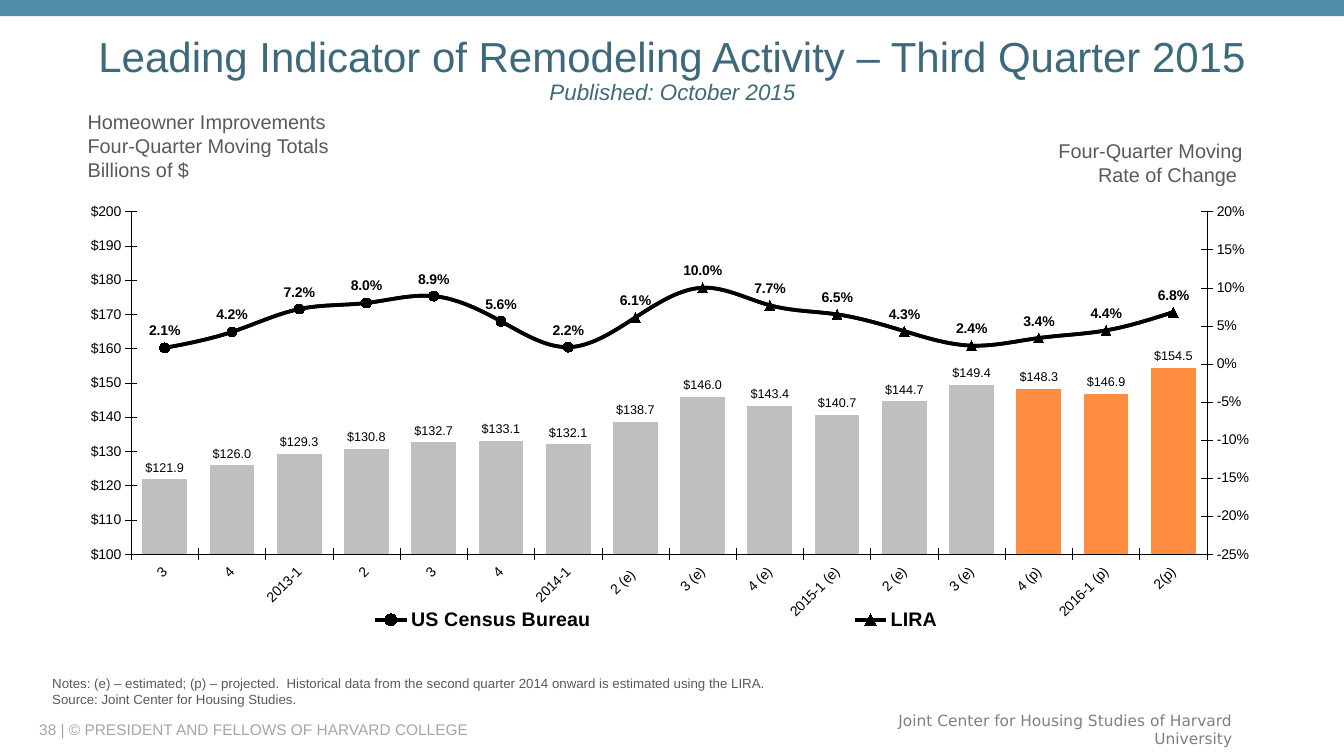
from copy import deepcopy

from pptx import Presentation
from pptx.chart.data import CategoryChartData as ChartData
from pptx.dml.color import RGBColor
from pptx.enum.chart import XL_CHART_TYPE as Kind, XL_LABEL_POSITION as Spot
from pptx.enum.chart import XL_LEGEND_POSITION as Side, XL_MARKER_STYLE as Mark
from pptx.enum.chart import XL_TICK_MARK as Tick
from pptx.enum.shapes import MSO_SHAPE as Shape
from pptx.enum.text import MSO_ANCHOR as Anchor, PP_ALIGN as Align
from pptx.oxml import parse_xml
from pptx.oxml.ns import nsdecls, qn
from pptx.util import Inches, Pt

WIDTH, HEIGHT = Inches(13.33), Inches(7.5)
TEAL = RGBColor(0x50, 0x8D, 0xA6)
NAVY = RGBColor(0x3C, 0x6A, 0x7C)
SLATE = RGBColor(0x5A, 0x5A, 0x5A)
GREY = RGBColor(0x80, 0x80, 0x80)
PALE = RGBColor(0xA6, 0xA6, 0xA6)
SILVER = RGBColor(0xBF, 0xBF, 0xBF)
ORANGE = RGBColor(0xFF, 0x8D, 0x41)
BLACK = RGBColor(0, 0, 0)

QUARTERS = ["3", "4", "2013-1", "2", "3", "4", "2014-1", "2 (e) ", "3 (e)", "4 (e)",
            "2015-1 (e)", "2 (e)", "3 (e)", "4 (p)", "2016-1 (p)", "2(p)"]
TOTALS = [121.9, 126, 129.3, 130.8, 132.7, 133.1, 132.1, 138.7,
          146, 143.4, 140.7, 144.7, 149.4, 148.3, 146.9, 154.5]
RATES = [0.021, 0.042, 0.072, 0.08, 0.089, 0.056, 0.022, 0.061,
         0.1, 0.077, 0.065, 0.043, 0.024, 0.034, 0.044, 0.068]
FIRST_LIRA = 7
FIRST_PROJECTED = 13


def place(left, top, width, height):
    """Turn percentages of the slide into lengths."""
    return [int(side * share / 100) for side, share in
            zip((WIDTH, HEIGHT, WIDTH, HEIGHT), (left, top, width, height))]


def set_font(font, size, color, bold=None, name="Arial"):
    font.size, font.name, font.bold = Pt(size), name, bold
    font.color.rgb = color


def add_run(para, text, size, color, name="Arial"):
    run = para.add_run()
    run.text = text
    set_font(run.font, size, color, name=name)
    return run


def add_box(slide, spot, anchor=Anchor.TOP):
    frame = slide.shapes.add_textbox(*place(*spot)).text_frame
    frame.word_wrap = True
    frame.vertical_anchor = anchor
    return frame


def add_text(slide, spot, lines, size, color, align=Align.LEFT,
             anchor=Anchor.TOP, name="Arial"):
    frame = add_box(slide, spot, anchor)
    for row, line in enumerate(lines):
        para = frame.add_paragraph() if row else frame.paragraphs[0]
        para.alignment = align
        add_run(para, line, size, color, name)


def add_title(slide):
    para = add_box(slide, (4.2, 4.4, 91.67, 10), Anchor.MIDDLE).paragraphs[0]
    para.alignment, para.line_spacing = Align.CENTER, 0.9
    add_run(para, "Leading Indicator of Remodeling Activity – Third Quarter 2015", 30, NAVY)
    para.add_line_break()
    add_run(para, "Published: October 2015", 16, NAVY).font.italic = True


def add_band(slide):
    band = slide.shapes.add_shape(Shape.RECTANGLE, *place(0, 0, 100, 2.13))
    band.shadow.inherit = False
    paint(band, TEAL)
    band.line.fill.background()


def drop(parent, tag):
    for child in parent.findall(qn(tag)):
        parent.remove(child)


def make_layout(left, top, width, height, inner=False):
    target = '<c:layoutTarget val="inner"/>' if inner else ""
    modes = '<c:xMode val="edge"/><c:yMode val="edge"/>'
    sizes = "".join(f'<c:{tag} val="{val}"/>' for tag, val in
                    zip("xywh", (left, top, width, height)))
    return parse_xml(f'<c:layout {nsdecls("c")}><c:manualLayout>{target}{modes}{sizes}'
                     '</c:manualLayout></c:layout>')


def style_axis(axis):
    axis.has_major_gridlines = False
    axis.major_tick_mark, axis.minor_tick_mark = Tick.CROSS, Tick.NONE
    set_font(axis.tick_labels.font, 10, BLACK)
    draw_line(axis.format.line, 0.33)


def scale_axis(axis, low, high, step, code):
    axis.minimum_scale, axis.maximum_scale, axis.major_unit = low, high, step
    axis.tick_labels.number_format = code
    axis.tick_labels.number_format_is_linked = False


def split_lines(chart):
    """Move all series but the first to a line plot on a second pair of axes."""
    bars = chart.plots[0]._element
    area = bars.getparent()
    lines = parse_xml(f'<c:lineChart {nsdecls("c")}><c:grouping val="standard"/>'
                      '<c:varyColors val="0"/><c:marker val="1"/>'
                      '<c:axId val="501"/><c:axId val="502"/></c:lineChart>')
    for ser in bars.findall(qn("c:ser"))[1:]:
        drop(ser, "c:invertIfNegative")
        lines.find(qn("c:marker")).addprevious(ser)
    bars.addnext(lines)
    last = area.find(qn("c:valAx"))
    for tag, own, other in (("c:catAx", "501", "502"), ("c:valAx", "502", "501")):
        twin = deepcopy(area.find(qn(tag)))
        twin.find(qn("c:axId")).set("val", own)
        twin.find(qn("c:crossAx")).set("val", other)
        if tag == "c:catAx":
            twin.find(qn("c:delete")).set("val", "1")
        else:
            twin.find(qn("c:axPos")).set("val", "r")
            twin.find(qn("c:crosses")).set("val", "max")
        last.addnext(twin)
        last = twin
    return type(chart.value_axis)(last)


def add_labels(series, spot, code, size, bold=None):
    labels = series.data_labels
    labels.show_value, labels.position = True, spot
    labels.number_format, labels.number_format_is_linked = code, False
    set_font(labels.font, size, BLACK, bold)


def paint(item, color):
    item.fill.solid()
    item.fill.fore_color.rgb = color


def draw_line(line, width=2.64):
    line.color.rgb = BLACK
    line.width = Pt(width)


def set_mark(marker, style):
    marker.style, marker.size = style, 7
    paint(marker.format, BLACK)
    marker.format.line.color.rgb = BLACK


def style_line(series, style, swaps, swap):
    """Use one marker for the series and another for the swapped points."""
    series.smooth = True
    draw_line(series.format.line)
    set_mark(series.marker, style)
    for spot in swaps:
        point = series.points[spot]
        set_mark(point.marker, swap)
        draw_line(point.format.line)


def add_legend(chart):
    chart.has_legend = True
    legend = chart.legend
    legend.position, legend.include_in_layout = Side.BOTTOM, False
    set_font(legend.font, 14, BLACK, True)
    drop(legend._element, "c:layout")
    pos = legend._element.find(qn("c:legendPos"))
    if pos is None:
        pos = parse_xml(f'<c:legendPos {nsdecls("c")} val="b"/>')
        legend._element.insert(0, pos)
    pos.addnext(make_layout(0.05, 0.92, 0.88, 0.08))
    pos.addnext(parse_xml(f'<c:legendEntry {nsdecls("c")}><c:idx val="0"/>'
                          '<c:delete val="1"/></c:legendEntry>'))


def add_combo(slide):
    data = ChartData()
    data.categories = QUARTERS
    for name, vals in (("Series 1", TOTALS), ("US Census Bureau", RATES), ("LIRA", RATES)):
        data.add_series(name, vals)
    chart = slide.shapes.add_chart(Kind.COLUMN_CLUSTERED,
                                   *place(4.2, 24.27, 91.07, 60.13), data).chart
    chart.has_title = False
    set_font(chart.font, 13.2, BLACK)
    for axis in (chart.category_axis, chart.value_axis):
        style_axis(axis)
    scale_axis(chart.value_axis, 100, 200, 10, "\\$#,##0")
    turn = chart.category_axis._element.find(qn("c:txPr")).find(qn("a:bodyPr"))
    turn.set("rot", "-2700000")
    turn.set("vert", "horz")
    scale_axis(split_lines(chart), -0.25, 0.2, 0.05, "0%")

    area = chart.plots[0]._element.getparent()
    drop(area, "c:layout")
    area.insert(0, make_layout(0.061, 0.062, 0.879, 0.754, inner=True))

    bars, lines = chart.plots
    bars.gap_width, bars.vary_by_categories = 50, False
    totals = bars.series[0]
    paint(totals.format, SILVER)
    for spot in range(FIRST_PROJECTED, len(QUARTERS)):
        paint(totals.points[spot].format, ORANGE)
    add_labels(totals, Spot.OUTSIDE_END, "\\$#,##0.0", 9)
    census, lira = lines.series
    style_line(census, Mark.CIRCLE, range(FIRST_LIRA, len(QUARTERS)), Mark.TRIANGLE)
    style_line(lira, Mark.TRIANGLE, range(FIRST_LIRA), Mark.CIRCLE)
    add_labels(lira, Spot.ABOVE, "0.0%", 10, True)
    add_legend(chart)


def main():
    deck = Presentation()
    deck.slide_width, deck.slide_height = WIDTH, HEIGHT
    slide = deck.slides.add_slide(deck.slide_layouts[6])
    add_text(slide, (2.18, 95.07, 59.41, 2.67),
             ["38 | © PRESIDENT AND FELLOWS OF HARVARD COLLEGE"], 11, PALE, anchor=Anchor.MIDDLE)
    add_text(slide, (63.17, 94.53, 29.26, 3.87),
             ["Joint Center for Housing Studies of Harvard University"], 11, GREY,
             Align.RIGHT, Anchor.MIDDLE, "DejaVu Sans")
    add_band(slide)
    add_title(slide)
    add_text(slide, (5.78, 13.87, 28.73, 10.93), ["Homeowner Improvements",
             "Four-Quarter Moving Totals", "Billions of $"], 14.2, SLATE)
    add_text(slide, (62.72, 17.73, 30.46, 7.73),
             ["Four-Quarter Moving", "Rate of Change "], 14.2, SLATE, Align.RIGHT)
    add_combo(slide)
    add_text(slide, (3.15, 88.67, 86.72, 5.6),
             ["Notes: (e) – estimated; (p) – projected.  Historical data from the second "
              "quarter 2014 onward is estimated using the LIRA.",
              "Source: Joint Center for Housing Studies."], 9.5, SLATE)
    deck.save("out.pptx")


if __name__ == "__main__":
    main()
